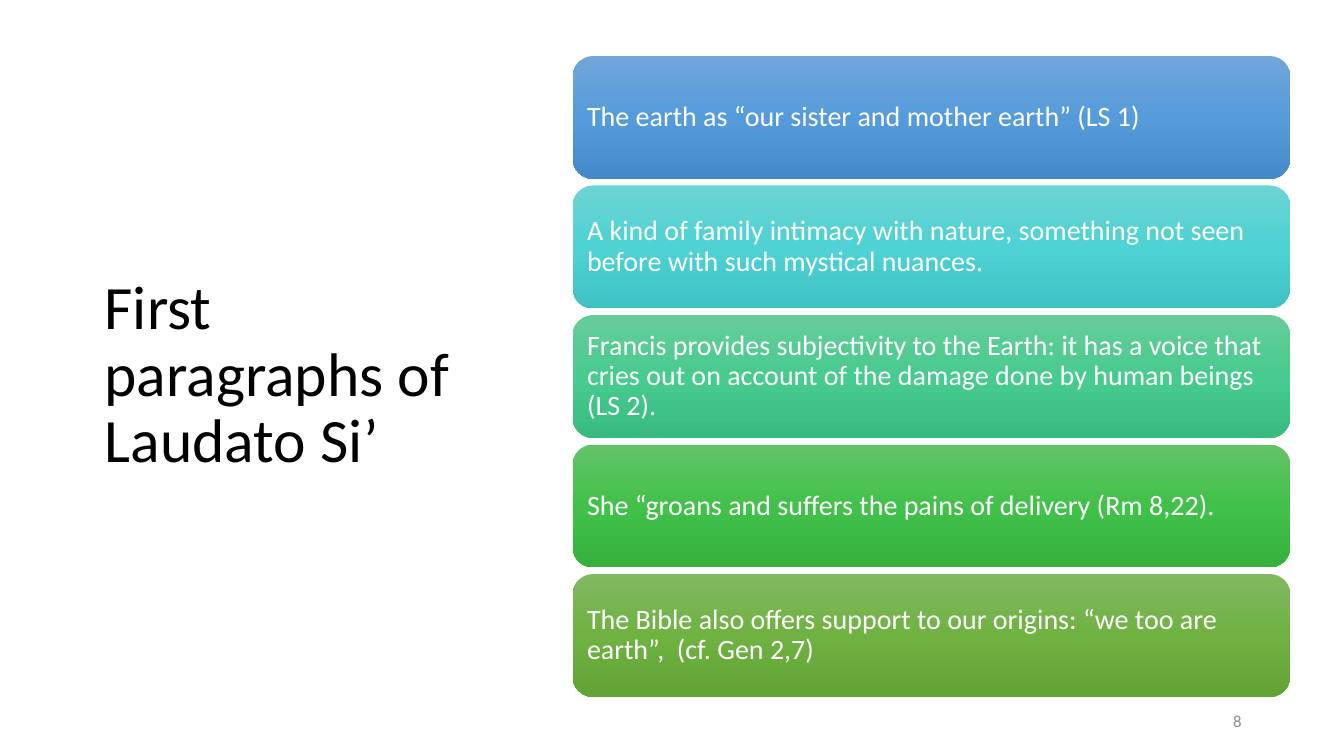
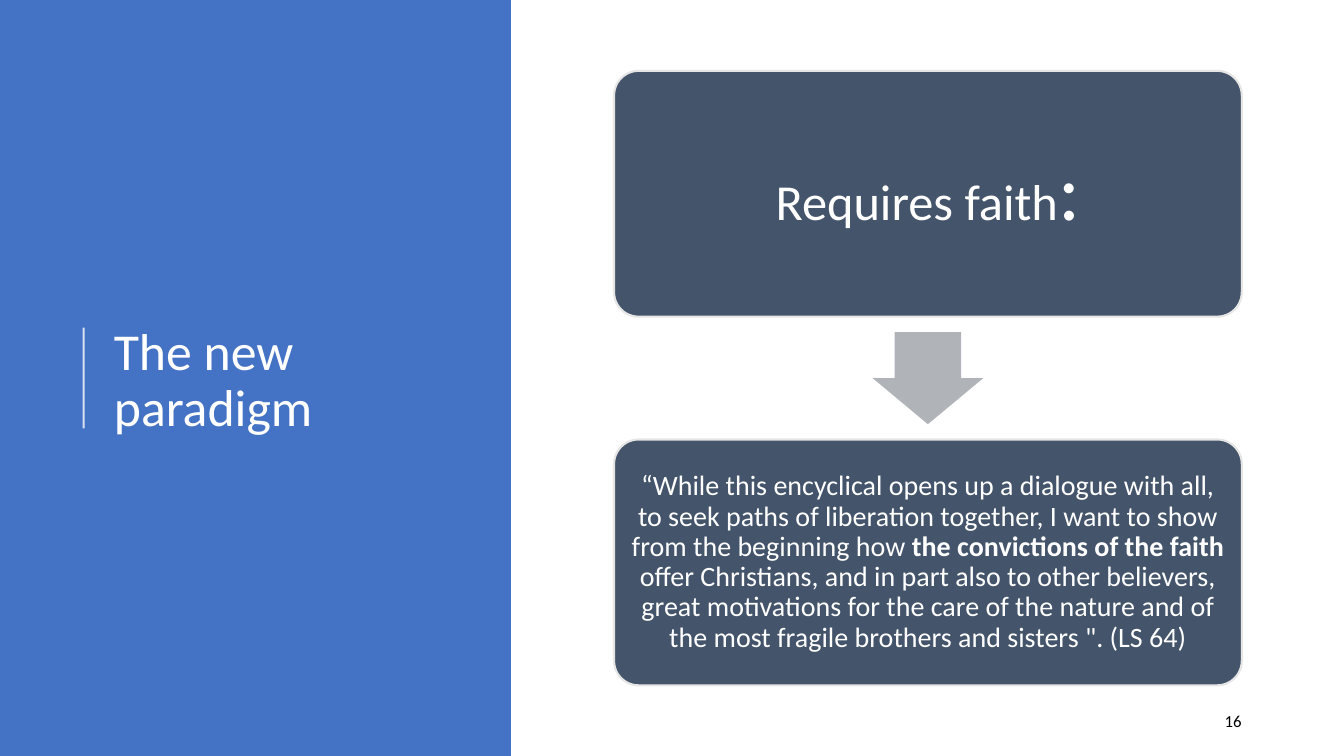
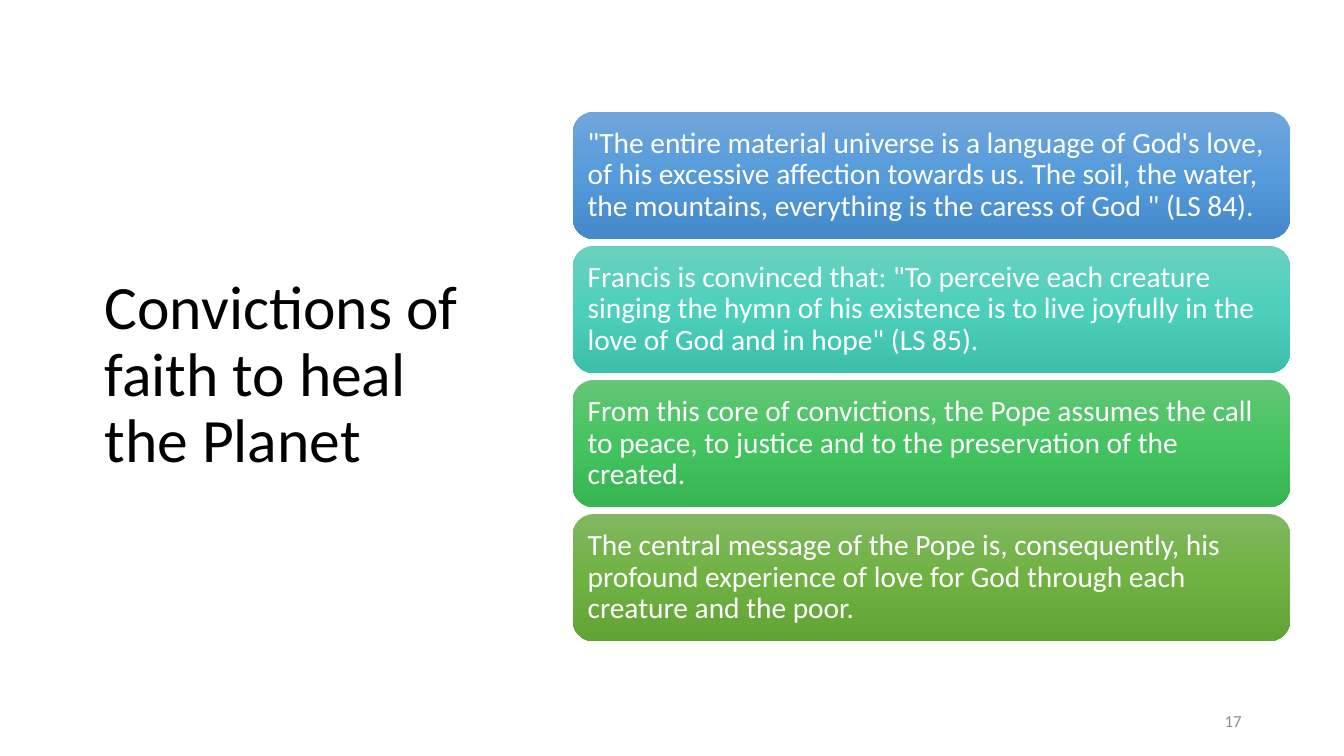
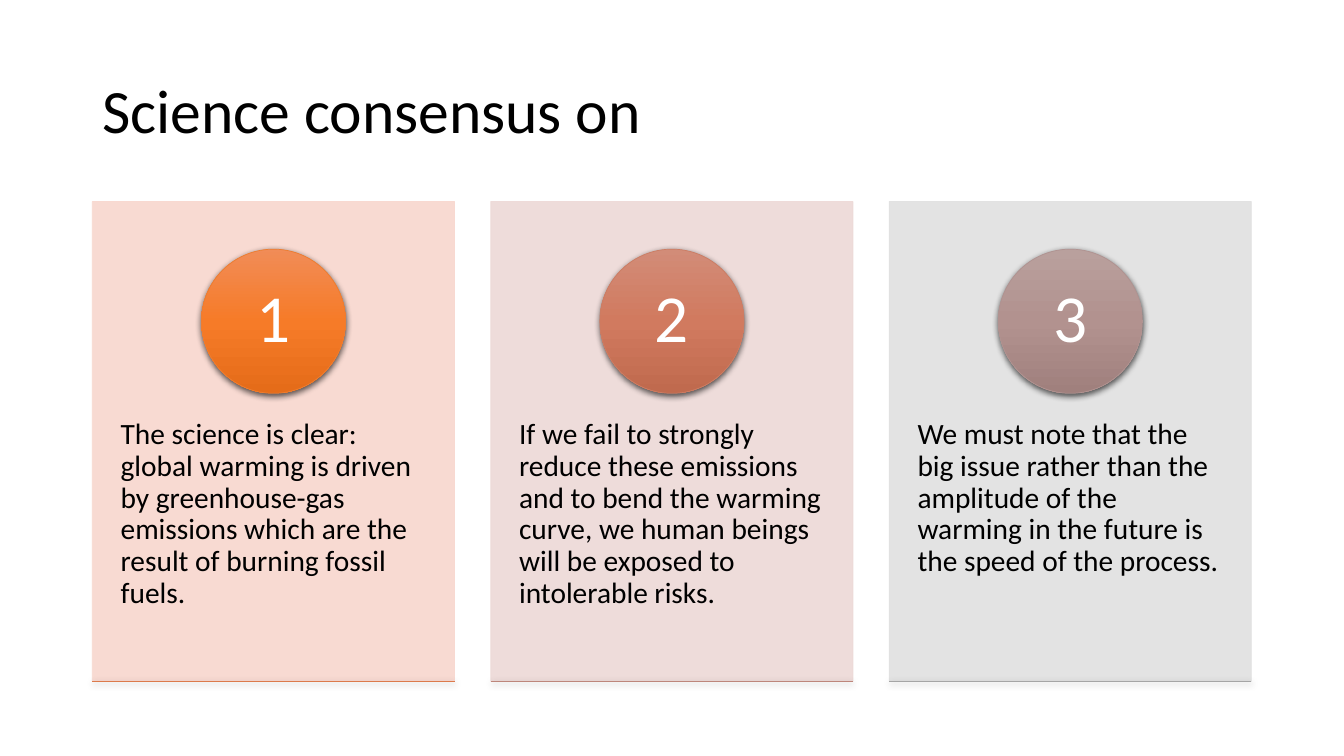
"""Build four slides on Laudato Si’, faith and the science of climate."""
from copy import deepcopy
from dataclasses import dataclass
from typing import NamedTuple

from lxml.etree import SubElement
from pptx import Presentation
from pptx.dml.color import RGBColor
from pptx.enum.shapes import MSO_CONNECTOR, MSO_SHAPE
from pptx.enum.text import MSO_ANCHOR, PP_ALIGN
from pptx.oxml.ns import qn
from pptx.util import Pt

FONT = "Calibri"
WHITE = RGBColor(0xFF, 0xFF, 0xFF)
BLACK = RGBColor(0x00, 0x00, 0x00)
GRAY = RGBColor(0x8C, 0x8C, 0x8C)
BLUE = RGBColor(0x44, 0x72, 0xC4)
SLATE = RGBColor(0x44, 0x54, 0x6A)
PALE = RGBColor(0xE7, 0xE6, 0xE6)
STEEL = RGBColor(0xB0, 0xB4, 0xB9)
PEACH = RGBColor(0xF8, 0xD7, 0xCE)
ROSE = RGBColor(0xED, 0xD9, 0xD7)
ASH = RGBColor(0xE1, 0xE1, 0xE1)
FLAME = RGBColor(0xED, 0x7D, 0x31)
RUST = RGBColor(0xDC, 0x7A, 0x4B)
CORAL = RGBColor(0xCC, 0x7D, 0x64)
CLAY = RGBColor(0xBD, 0x86, 0x7B)
MAUVE = RGBColor(0xB0, 0x93, 0x91)
STONE = RGBColor(0xA5, 0xA5, 0xA5)

Blend = tuple[RGBColor, ...]
SKY: Blend = (RGBColor(0x71, 0xA6, 0xDB), RGBColor(0x55, 0x9B, 0xDB), RGBColor(0x44, 0x8A, 0xCA))
AQUA: Blend = (RGBColor(0x6C, 0xD3, 0xD3), RGBColor(0x4E, 0xD2, 0xD3), RGBColor(0x3E, 0xC2, 0xC3))
TEAL: Blend = (RGBColor(0x6A, 0xD1, 0xC0), RGBColor(0x4C, 0xD0, 0xBC), RGBColor(0x3C, 0xC0, 0xAC))
MINT: Blend = (RGBColor(0x67, 0xCC, 0x9A), RGBColor(0x47, 0xCB, 0x8E), RGBColor(0x39, 0xBB, 0x7F))
JADE: Blend = (RGBColor(0x64, 0xC6, 0x77), RGBColor(0x44, 0xC4, 0x60), RGBColor(0x36, 0xB5, 0x52))
GREEN: Blend = (RGBColor(0x63, 0xC3, 0x68), RGBColor(0x42, 0xC1, 0x4A), RGBColor(0x34, 0xB2, 0x3D))
MOSS: Blend = (RGBColor(0x81, 0xB8, 0x61), RGBColor(0x6F, 0xB2, 0x42), RGBColor(0x62, 0xA3, 0x36))
FIRE: Blend = (RGBColor(0xF1, 0x8C, 0x57), RGBColor(0xF6, 0x7B, 0x28), RGBColor(0xE5, 0x6C, 0x19))
BRICK: Blend = (RGBColor(0xD2, 0x8C, 0x78), RGBColor(0xD1, 0x7A, 0x5F), RGBColor(0xC0, 0x6A, 0x4E))
DUSK: Blend = (RGBColor(0xB9, 0xA0, 0x9D), RGBColor(0xB2, 0x92, 0x8F), RGBColor(0xA0, 0x80, 0x7D))


class Box(NamedTuple):
    left: float
    top: float
    width: float
    height: float


class Pad(NamedTuple):
    left: float = 7.2
    top: float = 3.6
    right: float = 7.2
    bottom: float = 3.6


class Span(NamedTuple):
    text: str
    bold: bool | None = None
    size: float | None = None


class Style(NamedTuple):
    size: float
    color: RGBColor = WHITE
    align: PP_ALIGN = PP_ALIGN.LEFT
    anchor: MSO_ANCHOR = MSO_ANCHOR.MIDDLE
    pad: Pad = Pad()


@dataclass
class Bar:
    text: str
    blend: Blend


@dataclass
class Card:
    mark: str
    text: str
    fill: RGBColor
    blend: Blend
    edge: RGBColor
    rule: RGBColor


SIDE = Box(67.7, 80, 269.3, 377.3)

FIRST = [
    Bar("The earth as “our sister and mother earth” (LS 1)", SKY),
    Bar("A kind of family intimacy with nature, something not seen before with "
        "such mystical nuances.", AQUA),
    Bar("Francis provides subjectivity to the Earth: it has a voice that cries out "
        "on account of the damage done by human beings (LS 2).", MINT),
    Bar("She “groans and suffers the pains of delivery (Rm 8,22).", GREEN),
    Bar("The Bible also offers support to our origins: “we too are earth”,  "
        "(cf. Gen 2,7)", MOSS),
]
HEAL = [
    Bar("\"The entire material universe is a language of God's love, of his excessive "
        "affection towards us. The soil, the water, the mountains, everything is the "
        "caress of God \" (LS 84).", SKY),
    Bar("Francis is convinced that: \"To perceive each creature singing the hymn of his "
        "existence is to live joyfully in the love of God and in hope\" (LS 85).", TEAL),
    Bar("From this core of convictions, the Pope assumes the call to peace, to justice "
        "and to the preservation of the created.", JADE),
    Bar("The central message of the Pope is, consequently, his profound experience of "
        "love for God through each creature and the poor.", MOSS),
]
CARDS = [
    Card("1", "The science is clear: global warming is driven by greenhouse-gas emissions "
         "which are the result of burning fossil fuels.", PEACH, FIRE, FLAME, RUST),
    Card("2", "If we fail to strongly reduce these emissions and to bend the warming curve, "
         "we human beings will be exposed to intolerable risks.", ROSE, BRICK, CORAL, CLAY),
    Card("3", "We must note that the big issue rather than the amplitude of the warming in "
         "the future is the speed of the process.", ASH, DUSK, MAUVE, STONE),
]
FAITH = [Span("Requires faith"), Span(":", size=59)]
QUOTE = [
    Span("“While this encyclical opens up a dialogue with all, to seek paths of liberation "
         "together, I want to show from the beginning how "),
    Span("the convictions of the faith", bold=True),
    Span(" offer Christians, and in part also to other believers, great motivations for the "
         "care of the nature and of the most fragile brothers and sisters \". (LS 64)"),
]


def write(shape, spans: list[Span], style: Style, space: float = 0.9) -> None:
    frame = shape.text_frame
    frame.word_wrap = True
    frame.vertical_anchor = style.anchor
    pad = style.pad
    frame.margin_left, frame.margin_top = Pt(pad.left), Pt(pad.top)
    frame.margin_right, frame.margin_bottom = Pt(pad.right), Pt(pad.bottom)
    para = frame.paragraphs[0]
    para.alignment = style.align
    para.line_spacing = space
    para.font.name = FONT
    para.font.size = Pt(style.size)
    para.font.color.rgb = style.color
    for span in spans:
        run = para.add_run()
        run.text = span.text
        if span.bold is not None:
            run.font.bold = span.bold
        if span.size is not None:
            run.font.size = Pt(span.size)


def label(slide, box: Box, text: str, style: Style, space: float = 0.9) -> None:
    write(slide.shapes.add_textbox(*map(Pt, box)), [Span(text)], style, space)


def number(slide, text: str, color: RGBColor = GRAY) -> None:
    label(slide, Box(678, 500.5, 216, 28.8), text, Style(12, color, PP_ALIGN.RIGHT), 1.0)


def effect(shape, cast: bool) -> None:
    group = SubElement(shape._element.spPr, qn("a:effectLst"))
    if cast:
        outer = SubElement(group, qn("a:outerShdw"), blurRad=str(Pt(4.5)),
                           dist=str(Pt(1.5)), dir="5400000", algn="ctr", rotWithShape="0")
        tint = SubElement(outer, qn("a:srgbClr"), val=str(BLACK))
        SubElement(tint, qn("a:alpha"), val="63000")


def fade(shape, share: int) -> None:
    for tint in shape._element.spPr.iter(qn("a:srgbClr")):
        SubElement(tint, qn("a:alpha"), val=str(share * 1000))


def paint(shape, blend: Blend) -> None:
    fill = shape.fill
    fill.gradient()
    fill.gradient_angle = 270
    stops = next(shape._element.spPr.iter(qn("a:gsLst")))
    stops.insert(1, deepcopy(stops[0]))
    for stop, color, place in zip(fill.gradient_stops, blend, (0, 0.5, 1)):
        stop.color.rgb = color
        stop.position = place


def draw(slide, kind: MSO_SHAPE, box: Box, fill: RGBColor | Blend,
         edge: RGBColor | None = None, weight: float = 0.5, cast: bool = False):
    shape = slide.shapes.add_shape(kind, *map(Pt, box))
    if isinstance(fill, RGBColor):
        shape.fill.solid()
        shape.fill.fore_color.rgb = fill
    else:
        paint(shape, fill)
    if edge is None:
        shape.line.fill.background()
    else:
        shape.line.color.rgb = edge
        shape.line.width = Pt(weight)
    effect(shape, cast)
    return shape


def stroke(slide, start: tuple[float, float], end: tuple[float, float],
           color: RGBColor, weight: float, cast: bool = False):
    line = slide.shapes.add_connector(MSO_CONNECTOR.STRAIGHT, *map(Pt, start + end))
    line.line.color.rgb = color
    line.line.width = Pt(weight)
    effect(line, cast)
    return line


def stack(slide, title: str, bars: list[Bar], height: float, gap: float,
          size: float, page: str) -> None:
    label(slide, SIDE, title, Style(44, BLACK))
    step = height + gap
    top = 268.9 - (step * len(bars) - gap) / 2
    inset = size * 0.3
    style = Style(size, pad=Pad(inset, inset, inset, inset))
    for row, bar in enumerate(bars):
        box = Box(409, top + row * step, 512.6, height)
        write(draw(slide, MSO_SHAPE.ROUNDED_RECTANGLE, box, bar.blend),
              [Span(bar.text)], style)
    number(slide, page)


def shift(slide) -> None:
    draw(slide, MSO_SHAPE.RECTANGLE, Box(0, 0, 365, 540), BLUE)
    label(slide, Box(74.2, 56.2, 265.7, 433.4), "The new paradigm", Style(37))
    fade(stroke(slide, (59.8, 306), (59.8, 234), WHITE, 1.5), 80)
    number(slide, "16", BLACK)
    for top, spans, size, inset in ((50.6, FAITH, 36, 10.8), (313.9, QUOTE, 20, 6)):
        box = draw(slide, MSO_SHAPE.ROUNDED_RECTANGLE, Box(438.6, top, 448.4, 175.6),
                   SLATE, PALE, 1.5)
        box.adjustments[0] = 0.1
        write(box, spans, Style(size, align=PP_ALIGN.CENTER,
                                pad=Pad(inset, inset, inset, inset)))
    arrow = draw(slide, MSO_SHAPE.DOWN_ARROW, Box(623.3, 237.2, 79, 65.8), STEEL)
    arrow.adjustments[0] = 0.6
    arrow.adjustments[1] = 0.5


def deck(slide) -> None:
    label(slide, Box(66, 28.8, 828, 104.4), "Science consensus on", Style(44, BLACK))
    top, width, height, disc = 144, 258.7, 342.7, 103
    body = Style(21, BLACK, anchor=MSO_ANCHOR.TOP, pad=Pad(20.2, 155.5, 20.2, 25.9))
    mark = Style(48, align=PP_ALIGN.CENTER, pad=Pad(8, 0.7, 8, 0.7))
    for col, card in enumerate(CARDS):
        left = 66 + col * 284.6
        base = top + height
        panel = draw(slide, MSO_SHAPE.RECTANGLE, Box(left, top, width, height),
                     card.fill, card.fill)
        fade(panel, 90)
        write(panel, [Span(card.text)], body)
        spot = Box(left + (width - disc) / 2, 178, disc, disc)
        write(draw(slide, MSO_SHAPE.OVAL, spot, card.blend, card.edge, cast=True),
              [Span(card.mark)], mark)
        stroke(slide, (left, base), (left + width, base), card.rule, 0.5, True)


def main() -> None:
    show = Presentation()
    show.slide_width, show.slide_height = Pt(960), Pt(540)
    blank = show.slide_layouts[6]
    one, two, three, four = (show.slides.add_slide(blank) for _ in range(4))
    stack(one, "First paragraphs of Laudato Si’", FIRST, 87.8, 4.7, 20, "8")
    shift(two)
    stack(three, "Convictions of faith to heal the Planet", HEAL, 90.9, 4.9, 21, "17")
    deck(four)
    show.save("out.pptx")


if __name__ == "__main__":
    main()
